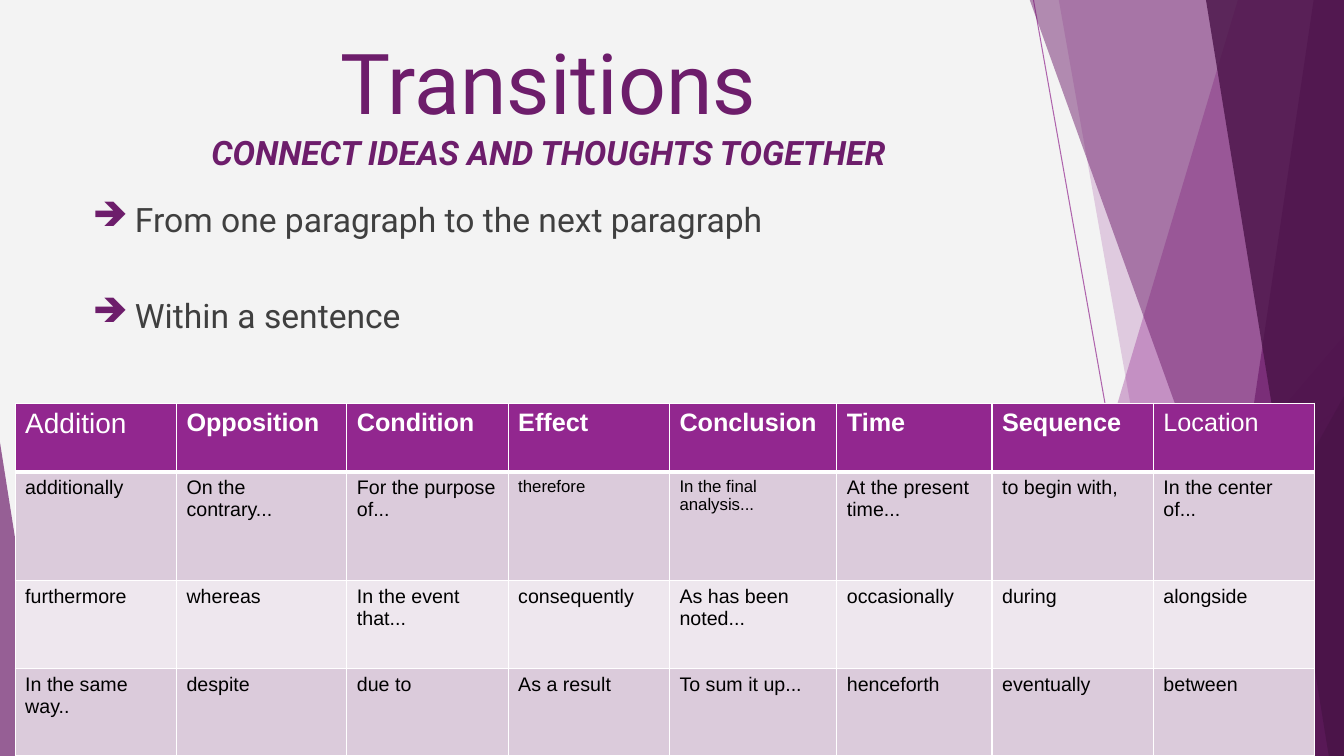
from pptx import Presentation
from pptx.dml.color import RGBColor
from pptx.enum.shapes import MSO_CONNECTOR as Line, MSO_SHAPE as Shape
from pptx.enum.text import MSO_ANCHOR as Anchor, PP_ALIGN as Align
from pptx.oxml import parse_xml
from pptx.oxml.ns import nsdecls, qn
from pptx.oxml.xmlchemy import OxmlElement
from pptx.util import Inches, Pt

PAPER = RGBColor(0xF3, 0xF3, 0xF3)
PURPLE = RGBColor(0x92, 0x27, 0x8F)
PLUM = RGBColor(0x6D, 0x1D, 0x6B)
DARK = RGBColor(0x49, 0x13, 0x47)
GREY = RGBColor(0x3F, 0x3F, 0x3F)
WHITE = RGBColor(0xFF, 0xFF, 0xFF)
BLACK = RGBColor(0, 0, 0)
BAND = RGBColor(0xDB, 0xCB, 0xDB)
PALE = RGBColor(0xEE, 0xE7, 0xEE)

TOP, RIGHT, BOTTOM = -0.01, 13.33, 7.5

HEADS = ["Addition", "Opposition", "Condition", "Effect",
         "Conclusion", "Time", "Sequence", "Location"]
WORDS = [
    ["additionally", "On the contrary...", "For the purpose of...", "therefore",
     "In the final analysis...", "At the present time...", "to begin with,",
     "In the center of..."],
    ["furthermore", "whereas", "In the event that...", "consequently",
     "As has been noted...", "occasionally", "during", "alongside"],
    ["In the same way..", "despite", "due to", "As a result",
     "To sum it up...", "henceforth", "eventually", "between"],
]
WIDTHS = [1.6, 1.69, 1.6, 1.6, 1.66, 1.54, 1.6, 1.6]
HEIGHTS = [0.68, 1.08, 0.87, 0.87]
LIGHT = {"Addition", "Location"}
SIZES = {"Addition": 20, "therefore": 12, "In the final analysis...": 12}


class Deck:
    font = "Roboto"
    grid = "Arial"

    def __init__(self, slide):
        self.slide = slide
        self.shapes = slide.shapes
        fill = slide.background.fill
        fill.solid()
        fill.fore_color.rgb = PAPER

    def fade(self, shape, alpha):
        """Set the opacity, in percent, of the shape's colour."""
        for color in shape.element.iter(qn("a:srgbClr")):
            mark = OxmlElement("a:alpha")
            mark.set("val", str(alpha * 1000))
            color.append(mark)

    def paint(self, shape, color, alpha):
        shape.shadow.inherit = False
        shape.fill.solid()
        shape.fill.fore_color.rgb = color
        shape.line.fill.background()
        self.fade(shape, alpha)

    def line(self, start, end):
        ends = [Inches(n) for n in (*start, *end)]
        line = self.shapes.add_connector(Line.STRAIGHT, *ends)
        line.line.color.rgb = PURPLE
        line.line.width = Pt(0.75)
        line.element.spPr.append(OxmlElement("a:effectLst"))
        self.fade(line, 69)

    def shard(self, top, base, color, alpha):
        """Fill from a slanted left edge to the right side of the slide."""
        points = [(top, TOP), (RIGHT, TOP), (RIGHT, BOTTOM), (base, BOTTOM)]
        points = [(Inches(x), Inches(y)) for x, y in points]
        path = self.shapes.build_freeform(*points[0], scale=1.0)
        path.add_line_segments(points[1:], close=True)
        self.paint(path.convert_to_shape(), color, alpha)

    def wedge(self, box, tip, color, alpha):
        shape = self.shapes.add_shape(Shape.ISOSCELES_TRIANGLE,
                                      *[Inches(n) for n in box])
        shape.adjustments[0] = tip
        self.paint(shape, color, alpha)

    def style(self, para, size, color, bold=False, italic=False, font=None):
        for run in para.runs:
            run.font.name = font or self.font
            run.font.size = Pt(size)
            run.font.bold = bold
            run.font.italic = italic
            run.font.color.rgb = color

    def text(self, box, lines, anchor=Anchor.TOP):
        """Add a text box and return its paragraphs."""
        frame = self.shapes.add_textbox(*[Inches(n) for n in box]).text_frame
        frame.word_wrap = True
        frame.vertical_anchor = anchor
        frame.text = "\n".join(lines)
        return frame.paragraphs

    def title(self, box, head, sub):
        first, last = self.text(box, [head, sub], Anchor.MIDDLE)
        first.alignment = last.alignment = Align.CENTER
        self.style(first, 60, PLUM)
        self.style(last, 24, PLUM, bold=True, italic=True)

    def bullets(self, box, lines):
        for i, para in enumerate(self.text(box, lines)):
            props = para._p.get_or_add_pPr()
            props.set("marL", str(Inches(0.5)))
            props.set("indent", str(Inches(-0.42)))
            props.append(parse_xml(f'<a:buClr {nsdecls("a")}>'
                                   f'<a:srgbClr val="{PLUM}"/></a:buClr>'))
            props.append(parse_xml(f'<a:buChar {nsdecls("a")} char="➔"/>'))
            if i:
                para.space_before = Pt(40)
            self.style(para, 24, GREY)

    def edge(self, cell, side, width):
        cell._tc.get_or_add_tcPr().append(parse_xml(
            f'<a:ln{side} {nsdecls("a")} w="{Pt(width)}"><a:solidFill>'
            f'<a:srgbClr val="{WHITE}"/></a:solidFill></a:ln{side}>'))

    def cell(self, cell, text, row):
        for side in "LRTB":
            thick = (row, side) in ((0, "B"), (1, "T"))
            self.edge(cell, side, 3 if thick else 1)
        cell.fill.solid()
        cell.fill.fore_color.rgb = (PURPLE, BAND, PALE, BAND)[row]
        cell.text = text
        size = SIZES.get(text, 14 if row else 18)
        self.style(cell.text_frame.paragraphs[0], size, BLACK if row else WHITE,
                   bold=row == 0 and text not in LIGHT, font=self.grid)

    def table(self, left, top, rows):
        table = self.shapes.add_table(
            len(rows), len(WIDTHS), Inches(left), Inches(top),
            Inches(sum(WIDTHS)), Inches(sum(HEIGHTS))).table
        for col, width in zip(table.columns, WIDTHS):
            col.width = Inches(width)
        for r, words in enumerate(rows):
            table.rows[r].height = Inches(HEIGHTS[r])
            for c, word in enumerate(words):
                self.cell(table.cell(r, c), word, r)


def main():
    prs = Presentation()
    prs.slide_width, prs.slide_height = Inches(13.33), Inches(7.5)
    deck = Deck(prs.slides.add_slide(prs.slide_layouts[6]))

    deck.line((10.25, 0), (11.58, BOTTOM))
    deck.line((RIGHT, 4.03), (8.12, BOTTOM))
    deck.shard(12.28, 10.04, PURPLE, 35)
    deck.shard(10.5, 11.83, PURPLE, 20)
    deck.wedge((9.77, 3.33, 3.56, 4.17), 1, PURPLE, 71)
    deck.shard(10.21, 12.91, PLUM, 49)
    deck.shard(13.03, 11.92, PLUM, 69)
    deck.shard(11.96, 13.18, DARK, 80)
    deck.wedge((11.34, 3.93, 1.99, 3.57), 1, DARK, 65)
    deck.wedge((0, 4.39, 0.49, 3.11), 0, PLUM, 69)

    deck.title((0.74, 0.22, 9.4, 1.57), "Transitions",
               "CONNECT IDEAS AND THOUGHTS TOGETHER")
    deck.bullets((0.74, 1.92, 9.4, 4.68),
                 ["From one paragraph to the next paragraph",
                  "Within a sentence"])
    deck.table(0.15, 4, [HEADS] + WORDS)
    prs.save("out.pptx")


if __name__ == "__main__":
    main()
